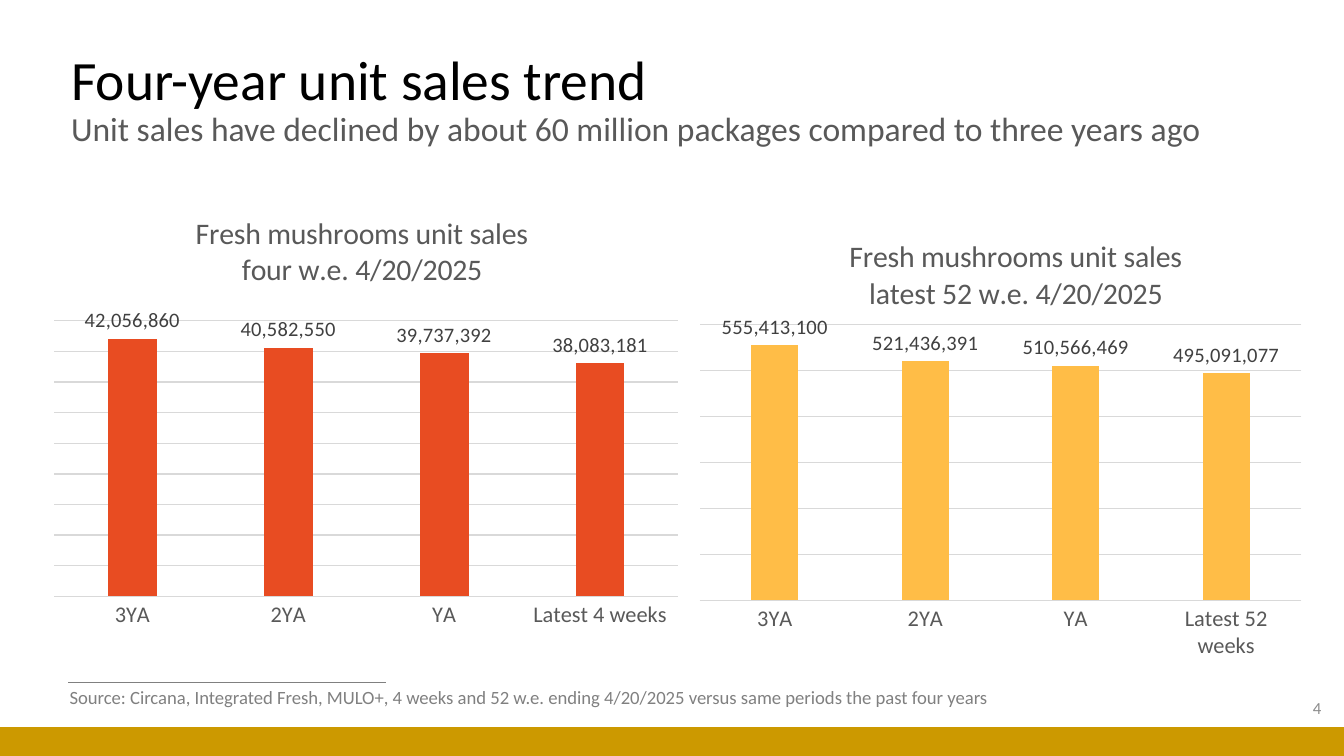
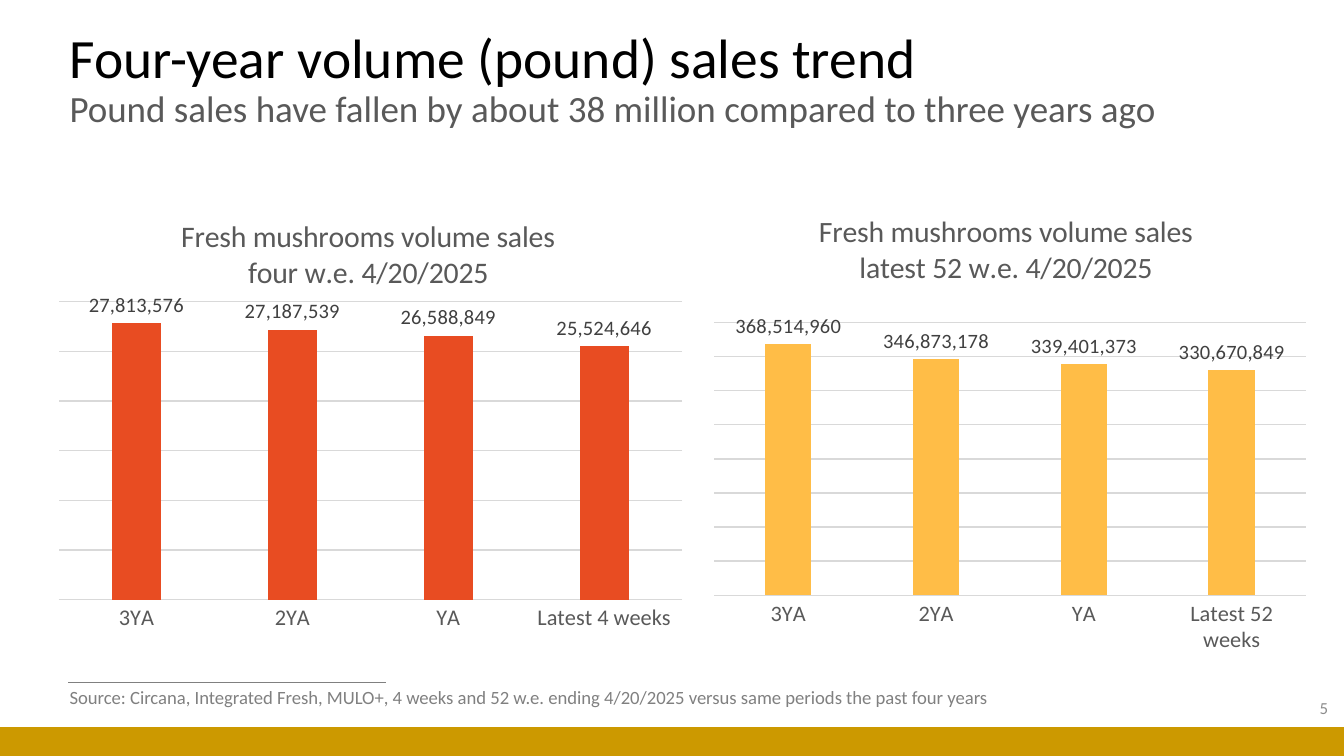
from pptx import Presentation
from pptx.chart.data import CategoryChartData
from pptx.dml.color import RGBColor
from pptx.enum.chart import XL_CHART_TYPE, XL_LABEL_POSITION, XL_TICK_MARK
from pptx.enum.shapes import MSO_CONNECTOR, MSO_SHAPE
from pptx.enum.text import MSO_ANCHOR, MSO_AUTO_SIZE, PP_ALIGN
from pptx.oxml import parse_xml
from pptx.oxml.ns import nsdecls, qn
from pptx.util import Pt
from lxml.etree import SubElement

COLORS = {
    "title": "000000",
    "subtitle": "595959",
    "number": "8C8C8C",
    "source": "808080",
    "band": "CC9900",
    "grid": "D9D9D9",
    "label": "404040",
    "four_weeks": "E84C22",
    "year": "FFBD47",
}
FONT = "Calibri"
NUMBER_FORMAT = "#,##0"
SOURCE = ("Source: Circana, Integrated Fresh, MULO+, 4 weeks and 52 w.e. ending "
          "4/20/2025 versus same periods the past four years")

# Each chart: frame in points, title corner and plot area as shares of the frame.
SLIDES = [
    {
        "number": 4,
        "number_left": 553,
        "title": "Four-year unit sales trend",
        "subtitle": "Unit sales have declined by about 60 million packages "
                    "compared to three years ago",
        "subtitle_size": 18,
        "title_frame": (31, 25.4, 652.3, 56.9),
        "charts": [
            {
                "title": ("Fresh mushrooms unit sales", "four w.e. 4/20/2025"),
                "latest": "Latest 4 weeks",
                "values": (42056860, 40582550, 39737392, 38083181),
                "color": "four_weeks",
                "frame": (28.8, 105.1, 334.8, 238.3),
                "title_corner": (0.22, 0.03),
                "plot": (0, 0.28, 1, 0.62),
            },
            {
                "title": ("Fresh mushrooms unit sales", "latest 52 w.e. 4/20/2025"),
                "latest": "Latest 52 weeks",
                "values": (555413100, 521436391, 510566469, 495091077),
                "color": "year",
                "frame": (374.4, 117.4, 339.8, 246.2),
                "title_corner": (0.23, 0.03),
                "plot": (0, 0.23, 0.95, 0.6),
            },
        ],
    },
    {
        "number": 5,
        "number_left": 556.6,
        "title": "Four-year volume (pound) sales trend",
        "subtitle": "Pound sales have fallen by about 38 million "
                    "compared to three years ago",
        "subtitle_size": 19.8,
        "title_frame": (30.2, 14.6, 619.2, 56.9),
        "charts": [
            {
                "title": ("Fresh mushrooms volume sales", "four w.e. 4/20/2025"),
                "latest": "Latest 4 weeks",
                "values": (27813576, 27187539, 26588849, 25524646),
                "color": "four_weeks",
                "frame": (31, 111.6, 334.8, 238.3),
                "title_corner": (0.19, 0.01),
                "plot": (0, 0.21, 1, 0.67),
            },
            {
                "title": ("Fresh mushrooms volume sales", "latest 52 w.e. 4/20/2025"),
                "latest": "Latest 52 weeks",
                "values": (368514960, 346873178, 339401373, 330670849),
                "color": "year",
                "frame": (382.3, 111.6, 317.5, 238.3),
                "title_corner": (0.17, 0),
                "plot": (0, 0.26, 1, 0.62),
            },
        ],
    },
]


def rgb(name):
    return RGBColor.from_string(COLORS[name])


def points(frame):
    return [Pt(length) for length in frame]


def style_font(font, size, color):
    font.name = FONT
    font.size = Pt(size)
    font.bold = False
    font.color.rgb = rgb(color)


def add_text_box(page, frame, text=""):
    box = page.shapes.add_textbox(*points(frame))
    box.text_frame.word_wrap = True
    box.text_frame.vertical_anchor = MSO_ANCHOR.MIDDLE
    paragraph = box.text_frame.paragraphs[0]
    paragraph.text = text
    return box, paragraph


def add_title(page, content):
    _, paragraph = add_text_box(page, content["title_frame"])
    paragraph.line_spacing = 0.9
    span = paragraph.add_run()
    span.text = content["title"]
    style_font(span.font, 29.7, "title")
    paragraph.add_line_break()
    span = paragraph.add_run()
    span.text = content["subtitle"]
    style_font(span.font, content["subtitle_size"], "subtitle")


def add_footer(page, content):
    rule = page.shapes.add_connector(
        MSO_CONNECTOR.STRAIGHT, *points((36.7, 365.8, 206.6, 365.8)))
    rule.line.color.rgb = rgb("source")
    rule.line.width = Pt(0.5)
    SubElement(rule._element.spPr, qn("a:effectLst"))

    band = page.shapes.add_shape(MSO_SHAPE.RECTANGLE, *points((0, 389.5, 720, 15.5)))
    band.shadow.inherit = False
    band.fill.solid()
    band.fill.fore_color.rgb = rgb("band")
    band.line.fill.background()

    _, paragraph = add_text_box(
        page, (content["number_left"], 368.6, 162, 21.6), str(content["number"]))
    paragraph.alignment = PP_ALIGN.RIGHT
    style_font(paragraph.font, 9, "number")

    box, paragraph = add_text_box(page, (30.2, 364, 521.3, 19.4), SOURCE)
    box.text_frame.word_wrap = False
    box.text_frame.auto_size = MSO_AUTO_SIZE.SHAPE_TO_FIT_TEXT
    box.text_frame.vertical_anchor = MSO_ANCHOR.TOP
    style_font(paragraph.font, 10, "source")


def set_layout(parent, index, corner, size=(), inner=False):
    """Place a chart part by shares of the chart frame."""
    for old in parent.findall(qn("c:layout")):
        parent.remove(old)
    target = '<c:layoutTarget val="inner"/>' if inner else ""
    modes = "".join(f'<c:{axis}Mode val="edge"/>' for axis in "xy")
    shares = "".join(f'<c:{key} val="{share}"/>'
                     for key, share in zip("xywh", (*corner, *size)))
    parent.insert(index, parse_xml(
        f'<c:layout {nsdecls("c")}><c:manualLayout>{target}{modes}{shares}'
        "</c:manualLayout></c:layout>"))


def style_axes(chart):
    categories = chart.category_axis
    categories.major_tick_mark = XL_TICK_MARK.NONE
    categories.minor_tick_mark = XL_TICK_MARK.NONE
    categories.has_major_gridlines = False
    style_font(categories.tick_labels.font, 12, "subtitle")
    values = chart.value_axis
    values.visible = False
    values.minimum_scale = 0
    values.has_major_gridlines = True
    values.tick_labels.number_format = NUMBER_FORMAT
    values.tick_labels.number_format_is_linked = False
    for line in (categories.format.line, values.major_gridlines.format.line):
        line.color.rgb = rgb("grid")
        line.width = Pt(0.75)


def style_columns(plot, color):
    plot.gap_width = 219
    plot.overlap = -27
    plot.vary_by_categories = False
    fill = plot.series[0].format.fill
    fill.solid()
    fill.fore_color.rgb = rgb(color)
    labels = plot.series[0].data_labels
    labels.show_value = True
    labels.position = XL_LABEL_POSITION.OUTSIDE_END
    labels.number_format = NUMBER_FORMAT
    labels.number_format_is_linked = False
    style_font(labels.font, 11, "label")


def add_chart_title(chart, lines, corner):
    chart.has_title = True
    frame = chart.chart_title.text_frame
    frame.text = "\n".join(lines)
    for paragraph in frame.paragraphs:
        style_font(paragraph.font, 16, "subtitle")
    set_layout(chart.chart_title._element, 1, corner)


def add_sales_chart(page, content):
    data = CategoryChartData(number_format=NUMBER_FORMAT)
    data.categories = ["3YA", "2YA", "YA", content["latest"]]
    data.add_series("Series 1", content["values"])
    chart = page.shapes.add_chart(
        XL_CHART_TYPE.COLUMN_CLUSTERED, *points(content["frame"]), data).chart
    chart.has_legend = False
    style_font(chart.font, 10, "title")
    add_chart_title(chart, content["title"], content["title_corner"])
    style_axes(chart)
    style_columns(chart.plots[0], content["color"])
    plot_area = chart._chartSpace.chart.plotArea
    set_layout(plot_area, 0, content["plot"][:2], content["plot"][2:], inner=True)


def main():
    deck = Presentation()
    deck.slide_width, deck.slide_height = Pt(720), Pt(405)
    for content in SLIDES:
        page = deck.slides.add_slide(deck.slide_layouts[6])
        add_footer(page, content)
        add_title(page, content)
        for chart in content["charts"]:
            add_sales_chart(page, chart)
    deck.save("out.pptx")


if __name__ == "__main__":
    main()
